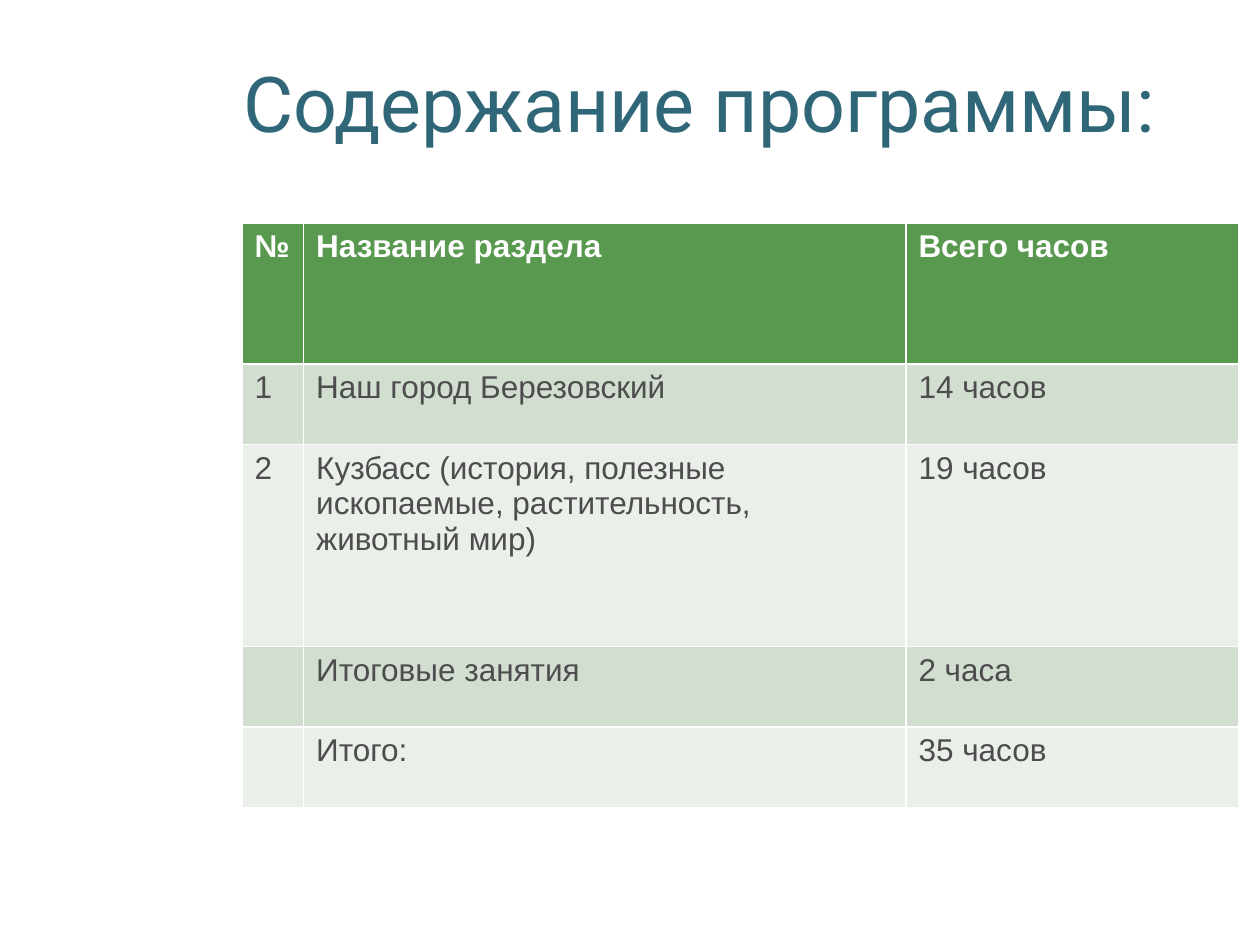
"""Builds the programme contents slide with its table of hours."""
from pptx import Presentation
from pptx.dml.color import RGBColor
from pptx.enum.text import MSO_ANCHOR, PP_ALIGN
from pptx.util import Inches, Pt

LEFT = PP_ALIGN.LEFT
MIDDLE = MSO_ANCHOR.MIDDLE

TITLE = "Содержание программы:"
ROWS = [
    ("№", "Название раздела", "Всего часов"),
    ("1", "Наш город Березовский", "14 часов"),
    ("2", "Кузбасс (история, полезные ископаемые, растительность, животный мир)", "19 часов"),
    ("", "Итоговые занятия", "2 часа"),
    ("", "Итого:", "35 часов"),
]
COLUMN_WIDTHS = [0.49, 4.78, 2.64]
ROW_HEIGHTS = [1.12, 0.64, 1.6, 0.64, 0.64]
COLORS = {
    "title": "306778",
    "header": "59994F",
    "header_text": "FFFFFF",
    "odd_row": "D1DED0",
    "even_row": "EAEFE9",
    "body_text": "4D4D4D",
}


def color(name):
    return RGBColor.from_string(COLORS[name])


def style_font(font, name, size, color_name, bold=False):
    font.name = name
    font.size = Pt(size)
    font.bold = bold
    font.color.rgb = color(color_name)


def add_title(slide):
    title = slide.shapes.title
    title.left, title.top = Inches(1.83), Inches(0.42)
    title.width, title.height = Inches(8), Inches(0.78)
    title.text_frame.text = TITLE
    title.text_frame.vertical_anchor = MIDDLE
    paragraph = title.text_frame.paragraphs[0]
    paragraph.alignment = LEFT
    style_font(paragraph.font, "Roboto", 44, "title")


def add_hours_table(slide):
    table = slide.shapes.add_table(
        len(ROWS), len(COLUMN_WIDTHS), Inches(1.92), Inches(1.77),
        Inches(sum(COLUMN_WIDTHS)), Inches(sum(ROW_HEIGHTS)),
    ).table
    for column, width in zip(table.columns, COLUMN_WIDTHS):
        column.width = Inches(width)
    for index, (row, height, texts) in enumerate(zip(table.rows, ROW_HEIGHTS, ROWS)):
        row.height = Inches(height)
        is_header = index == 0
        fill_name = "header" if is_header else "odd_row" if index % 2 else "even_row"
        text_color = "header_text" if is_header else "body_text"
        for cell, text in zip(row.cells, texts):
            cell.fill.solid()
            cell.fill.fore_color.rgb = color(fill_name)
            cell.text = text
            paragraph = cell.text_frame.paragraphs[0]
            paragraph.alignment = LEFT
            style_font(paragraph.font, "Arial", 18, text_color, is_header)


def main():
    presentation = Presentation()
    presentation.slide_width, presentation.slide_height = Inches(10), Inches(7.5)
    slide = presentation.slides.add_slide(presentation.slide_layouts.get_by_name("Title Only"))
    add_title(slide)
    add_hours_table(slide)
    presentation.save("out.pptx")


if __name__ == "__main__":
    main()
